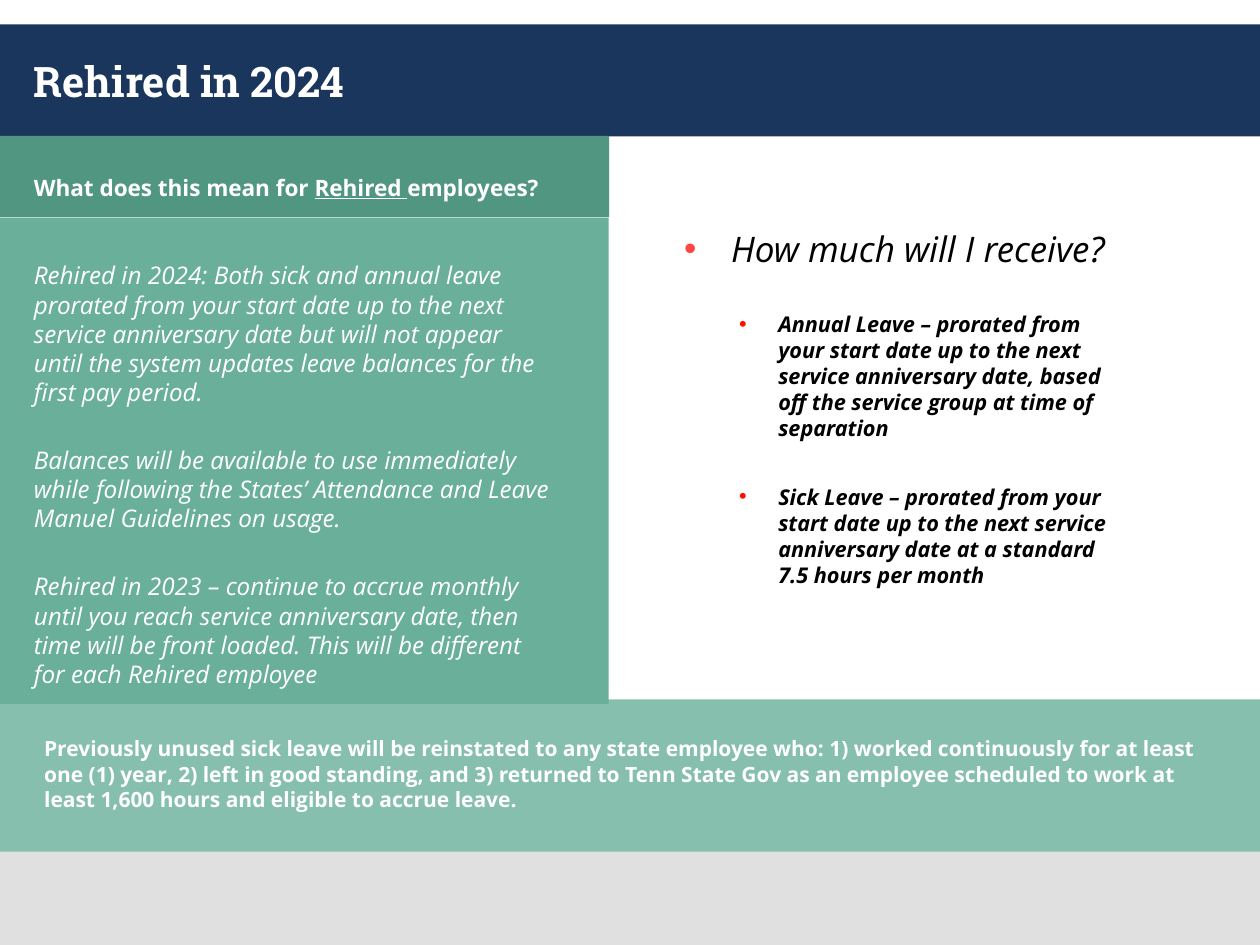
from lxml import etree
from pptx import Presentation
from pptx.dml.color import RGBColor
from pptx.enum.shapes import MSO_SHAPE
from pptx.enum.text import MSO_ANCHOR, MSO_AUTO_SIZE, PP_ALIGN
from pptx.oxml.ns import qn
from pptx.util import Cm, Pt

RECTANGLE = MSO_SHAPE.RECTANGLE
TOP, MIDDLE = MSO_ANCHOR.TOP, MSO_ANCHOR.MIDDLE
NO_FIT, LEFT = MSO_AUTO_SIZE.NONE, PP_ALIGN.LEFT

PANELS = [
    ("1B365D", 0, 0.49, 25.4, 2.26),
    ("E0E0E0", 0, 17.09, 25.4, 1.96),
    ("87BFAE", 0, 14.1, 25.4, 3.07),
    ("69AF99", 0, 4.39, 12.27, 9.8),
    ("509680", 0, 2.74, 12.28, 1.64),
]
WHITE_BOLD = {"name": "Open Sans", "color": "FFFFFF", "bold": True}
TITLE = {**WHITE_BOLD, "name": "Roboto Slab", "size": Pt(24)}
HEADING = {**WHITE_BOLD, "size": Pt(12.9)}
ANSWER = {**WHITE_BOLD, "size": Pt(13.9), "bold": False, "italic": True}
NOTE = {**WHITE_BOLD, "size": Pt(12)}
QUESTION = {"name": "Open Sans", "color": "000000", "size": Pt(20.1), "italic": True}
LEAVE = {**QUESTION, "size": Pt(12.4), "bold": True}

ANSWERS = [
    "Rehired in 2024: Both sick and annual leave prorated from your start date up to the next "
    "service anniversary date but will not appear until the system updates leave balances for "
    "the first pay period.",
    "Balances will be available to use immediately while following the States’ Attendance and "
    "Leave Manuel Guidelines on usage.",
    "Rehired in 2023 – continue to accrue monthly until you reach service anniversary date, then "
    "time will be front loaded. This will be different for each Rehired employee",
]
LEAVES = [
    "Annual Leave – prorated from your start date up to the next service anniversary date, "
    "based off the service group at time of separation",
    "Sick Leave – prorated from your start date up to the next service anniversary date at a "
    "standard 7.5 hours per month",
]
REINSTATEMENT = (
    "Previously unused sick leave will be reinstated to any state employee who: 1) worked "
    "continuously for at least one (1) year, 2) left in good standing, and 3) returned to Tenn "
    "State Gov as an employee scheduled to work at least 1,600 hours and eligible to accrue leave."
)


def rgb(color):
    """Turn a hex string into a colour."""
    return RGBColor.from_string(color)


def add_panel(slide, color, *bounds):
    """Add a plain filled rectangle."""
    panel = slide.shapes.add_shape(RECTANGLE, *map(Cm, bounds))
    panel.shadow.inherit = False
    panel.fill.solid()
    panel.fill.fore_color.rgb = rgb(color)
    panel.line.fill.background()


def place_text(box, bounds, anchor=TOP):
    """Position a text holder, bring it to the front and return its frame."""
    box.left, box.top, box.width, box.height = map(Cm, bounds)
    tree = box.element.getparent()
    tree.append(box.element)
    frame = box.text_frame
    frame.word_wrap = True
    frame.auto_size = NO_FIT
    frame.vertical_anchor = anchor
    return frame


def add_span(para, text, style):
    """Add a run formatted from a dict of font values."""
    span = para.add_run()
    span.text = text
    for name, value in style.items():
        if name == "color":
            span.font.color.rgb = rgb(value)
        else:
            setattr(span.font, name, value)


def set_bullet(para, color=None, margin=0, indent=0):
    """Set the indents and a coloured bullet, or none without a colour."""
    properties = para._p.get_or_add_pPr()
    properties.set("marL", str(Cm(margin)))
    properties.set("indent", str(Cm(indent)))
    if color is None:
        etree.SubElement(properties, qn("a:buNone"))
        return
    fill = etree.SubElement(properties, qn("a:buClr"))
    etree.SubElement(fill, qn("a:srgbClr"), val=color)
    etree.SubElement(properties, qn("a:buFont"), typeface="Arial")
    etree.SubElement(properties, qn("a:buChar"), char="•")


def add_para(frame, spans, before=0, level=0, **bullet):
    """Fill the first empty paragraph or append one."""
    first = frame.paragraphs[0]
    para = frame.add_paragraph() if first.runs else first
    set_bullet(para, **bullet)
    para.level = level
    para.alignment = LEFT
    para.space_before = Pt(before)
    for text, style in spans:
        add_span(para, text, style)


def main():
    """Build the slide about rehired employees."""
    deck = Presentation()
    deck.slide_width, deck.slide_height = Cm(25.4), Cm(19.05)
    slide = deck.slides.add_slide(deck.slide_layouts[1])
    for panel in PANELS:
        add_panel(slide, *panel)

    title = place_text(slide.shapes.title, (0.43, 0.48, 24.56, 2.29), MIDDLE)
    add_para(title, [("Rehired in 2024", TITLE)])

    body = place_text(slide.placeholders[1], (0.43, 3.38, 11, 10.59))
    add_para(body, [
        ("What does this mean for ", HEADING),
        ("Rehired ", {**HEADING, "underline": True}),
        ("employees?", HEADING),
    ])
    for number, answer in enumerate(ANSWERS):
        add_para(body, [(answer, ANSWER)], before=22.2 if number else 34)

    note_bounds = (0.64, 14.71, 24.13, 1.8)
    note = place_text(slide.shapes.add_textbox(*map(Cm, note_bounds)), note_bounds)
    add_para(note, [(REINSTATEMENT, NOTE)])

    list_bounds = (13.54, 4.45, 9.32, 7.62)
    leaves = place_text(slide.shapes.add_textbox(*map(Cm, list_bounds)), list_bounds)
    add_para(leaves, [("How much will I receive?", QUESTION)],
             color="FF4644", margin=0.95, indent=-0.95)
    for leave in LEAVES:
        add_para(leaves, [(leave, LEAVE)], before=24.1, level=1,
                 color="FF0F00", margin=1.9, indent=-0.79)

    deck.save("out.pptx")


if __name__ == "__main__":
    main()
